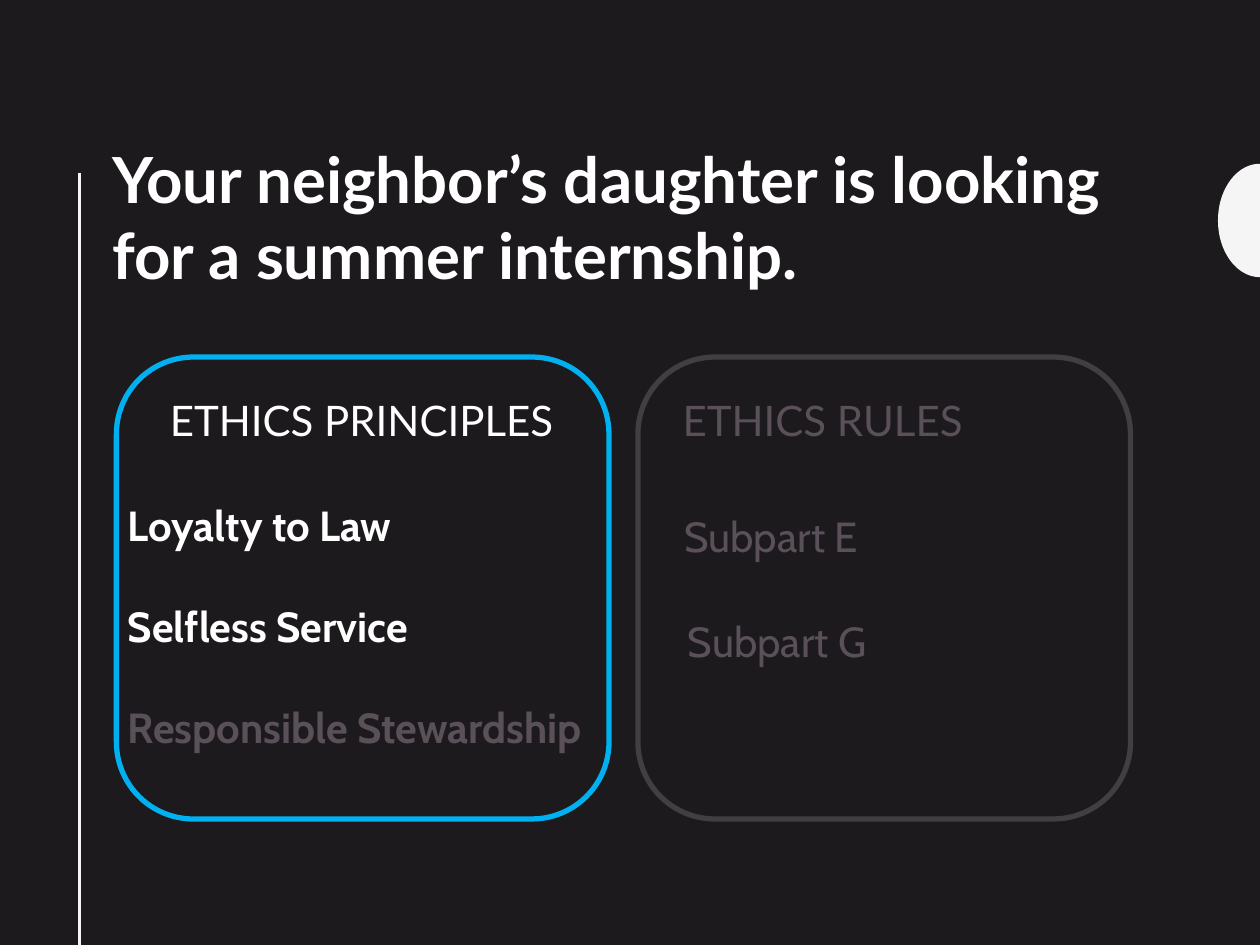
"""Build the ethics slide about a neighbor's daughter and an internship."""
from math import cos, pi, sin

from lxml.etree import SubElement
from pptx import Presentation
from pptx.dml.color import RGBColor
from pptx.enum.shapes import MSO_CONNECTOR, MSO_SHAPE
from pptx.oxml.ns import qn
from pptx.util import Pt

DARK, WHITE, PALE, MUTED = "1D1A1D", "FFFFFF", "F5F5F5", "595059"
BLUE, GRAY = "00B0F0", "404040"


def rgb(value):
    return RGBColor.from_string(value)


class SlideBuilder:
    def __init__(self, prs):
        self.s = prs.slides.add_slide(prs.slide_layouts[6])
        fill = self.s.background.fill
        fill.solid()
        fill.fore_color.rgb = rgb(DARK)

    def half_ellipse(self, right, middle, rx, ry, color, steps=48):
        angles = [pi * i / steps for i in range(steps + 1)]
        points = [(Pt(right - rx * sin(a)), Pt(middle - ry * cos(a))) for a in angles]
        builder = self.s.shapes.build_freeform(*points[0])
        builder.add_line_segments(points[1:], close=True)
        sp = builder.convert_to_shape()
        sp.shadow.inherit = False
        sp.fill.solid()
        sp.fill.fore_color.rgb = rgb(color)
        sp.line.fill.background()

    def line(self, x1, y1, x2, y2, color, width):
        ends = [Pt(v) for v in (x1, y1, x2, y2)]
        sp = self.s.shapes.add_connector(MSO_CONNECTOR.STRAIGHT, *ends)
        sp.line.color.rgb = rgb(color)
        sp.line.width = Pt(width)
        SubElement(sp._element.spPr, qn("a:effectLst"))

    def frame(self, x, y, w, h, color):
        box = [Pt(v) for v in (x, y, w, h)]
        sp = self.s.shapes.add_shape(MSO_SHAPE.ROUNDED_RECTANGLE, *box)
        sp.shadow.inherit = False
        sp.fill.background()
        sp.line.color.rgb = rgb(color)
        sp.line.width = Pt(3)

    def text(self, x, y, w, h, lines, gap=0, **style):
        tf = self.s.shapes.add_textbox(Pt(x), Pt(y), Pt(w), Pt(h)).text_frame
        tf.word_wrap = True
        for i, (content, color) in enumerate(lines):
            p = tf.add_paragraph() if i else tf.paragraphs[0]
            p.space_before = Pt(gap if i else 0)
            r = p.add_run()
            r.text = content
            r.font.color.rgb = rgb(color)
            for name, value in {"size": Pt(24), **style}.items():
                setattr(r.font, name, value)


def main():
    prs = Presentation()
    prs.slide_width, prs.slide_height = Pt(720), Pt(540)
    slide = SlideBuilder(prs)

    slide.half_ellipse(720, 126, 24, 32.4, PALE)
    slide.line(45.5, 99, 45.5, 540, PALE, 2)
    title = "Your neighbor’s daughter is looking for a summer internship."
    slide.text(57, 76.5, 597, 116.5, [(title, WHITE)],
               name="Lato", size=Pt(36.3), bold=True)

    panels = [
        (66.5, BLUE, 90, "ETHICS PRINCIPLES", WHITE),
        (364.5, GRAY, 383, "ETHICS RULES", MUTED),
    ]
    for left, border, text_left, heading, color in panels:
        slide.text(text_left, 222, 260, 36, [(heading, color)], name="Lato")
        slide.frame(left, 204, 281.5, 264, border)

    principles = [("Loyalty to Law", WHITE), ("Selfless Service", WHITE),
                  ("Responsible Stewardship", MUTED)]
    slide.text(66, 282, 277, 153, principles, gap=28.8, name="Cabin", bold=True)
    for left, top, rule in [(384, 288, "Subpart E"), (386, 348, "Subpart G")]:
        slide.text(left, top, 334, 36, [(rule, MUTED)], name="Cabin")

    prs.save("out.pptx")


if __name__ == "__main__":
    main()
